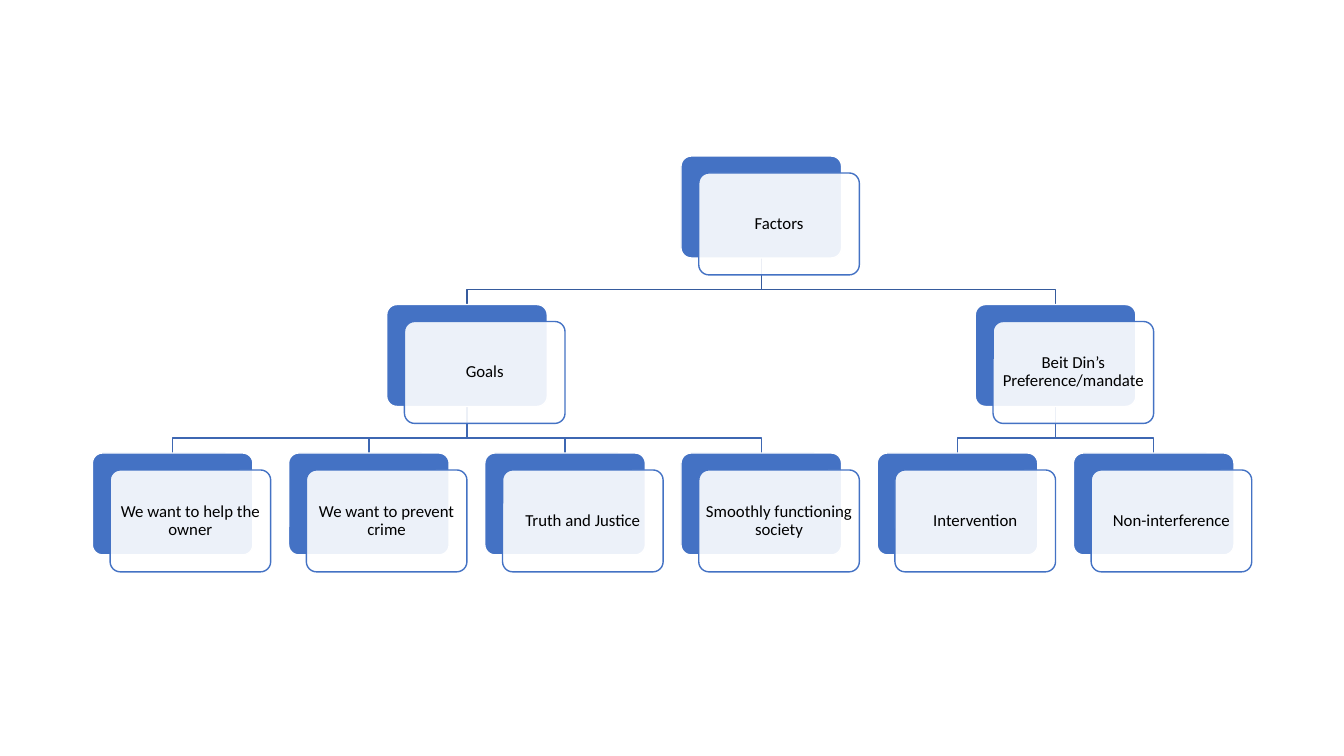
from dataclasses import dataclass

import lxml.etree
import pptx
import pptx.dml.color
import pptx.enum.shapes
import pptx.enum.text
import pptx.oxml.ns
import pptx.util

Pt = pptx.util.Pt


@dataclass(frozen=True)
class Theme:
    blue: str = "4472C4"
    white: str = "FFFFFF"
    black: str = "000000"
    links: tuple = ("365B9D", "3E67B2")  # by level of the parent
    font: str = "Calibri"
    size: float = 12
    line: float = 1


THEME = Theme()

LEFT, TOP = 66, 111.5
WIDE, HIGH = 114.7, 72.8
COL, ROW = 140.15, 106.05
SHIFT_X, SHIFT_Y = 12.7, 12.1
BEND, DROP = 22.6, 33.2
INSET = 3  # the rounded corners add about 2 points more

# Each node: label, column, children
TREE = ("Factors", 3, [
    ("Goals", 1.5, [
        ("We want to help the owner", 0, []),
        ("We want to prevent crime", 1, []),
        ("Truth and Justice", 2, []),
        ("Smoothly functioning society", 3, []),
    ]),
    ("Beit Din’s Preference/mandate", 4.5, [
        ("Intervention", 4, []),
        ("Non-interference", 5, []),
    ]),
])


def color(code):
    return pptx.dml.color.RGBColor.from_string(code)


def add_link(slide, start, end, level):
    """Draw a bent line from the base of a parent to the top of a child."""
    from_x, to_x = (Pt(LEFT + col * COL + WIDE / 2) for col in (start, end))
    base = TOP + level * ROW + HIGH
    path = slide.shapes.build_freeform(from_x, Pt(base))
    path.add_line_segments([
        (from_x, Pt(base + BEND)),
        (to_x, Pt(base + BEND)),
        (to_x, Pt(base + DROP)),
    ], close=False)
    link = path.convert_to_shape()
    link.shadow.inherit = False
    link.fill.background()
    link.line.color.rgb = color(THEME.links[level])
    link.line.width = Pt(THEME.line)


def add_box(slide, left, top, fill, line):
    box = slide.shapes.add_shape(
        pptx.enum.shapes.MSO_SHAPE.ROUNDED_RECTANGLE,
        Pt(left), Pt(top), Pt(WIDE), Pt(HIGH))
    box.adjustments[0] = 0.1
    box.shadow.inherit = False
    box.fill.solid()
    box.fill.fore_color.rgb = color(fill)
    box.line.color.rgb = color(line)
    box.line.width = Pt(THEME.line)
    return box


def set_alpha(shape, percent):
    qn = pptx.oxml.ns.qn
    tint = shape.element.spPr.find(qn("a:solidFill"))[0]
    lxml.etree.SubElement(tint, qn("a:alpha")).set("val", str(percent * 1000))


def set_label(shape, label):
    frame = shape.text_frame
    frame.text = label
    frame.word_wrap = True
    frame.vertical_anchor = pptx.enum.text.MSO_ANCHOR.MIDDLE
    frame.margin_left = frame.margin_right = Pt(INSET)
    frame.margin_top = frame.margin_bottom = Pt(INSET)
    para = frame.paragraphs[0]
    para.alignment = pptx.enum.text.PP_ALIGN.CENTER
    para.line_spacing = 0.9
    font = para.runs[0].font
    font.name = THEME.font
    font.size = Pt(THEME.size)
    font.color.rgb = color(THEME.black)


def add_card(slide, label, col, level):
    """Draw a blue box with a labelled, nearly opaque box over it."""
    left, top = LEFT + col * COL, TOP + level * ROW
    add_box(slide, left, top, THEME.blue, THEME.white)
    front = add_box(slide, left + SHIFT_X, top + SHIFT_Y,
                    THEME.white, THEME.blue)
    set_alpha(front, 90)
    set_label(front, label)


def add_links(slide, node, level=0):
    _, col, kids = node
    for kid in kids:
        add_link(slide, col, kid[1], level)
        add_links(slide, kid, level + 1)


def add_cards(slide, node, level=0):
    label, col, kids = node
    add_card(slide, label, col, level)
    for kid in kids:
        add_cards(slide, kid, level + 1)


def main():
    deck = pptx.Presentation()
    deck.slide_width, deck.slide_height = Pt(960), Pt(540)
    slide = deck.slides.add_slide(deck.slide_layouts[6])
    add_links(slide, TREE)
    add_cards(slide, TREE)
    deck.save("out.pptx")


if __name__ == "__main__":
    main()
